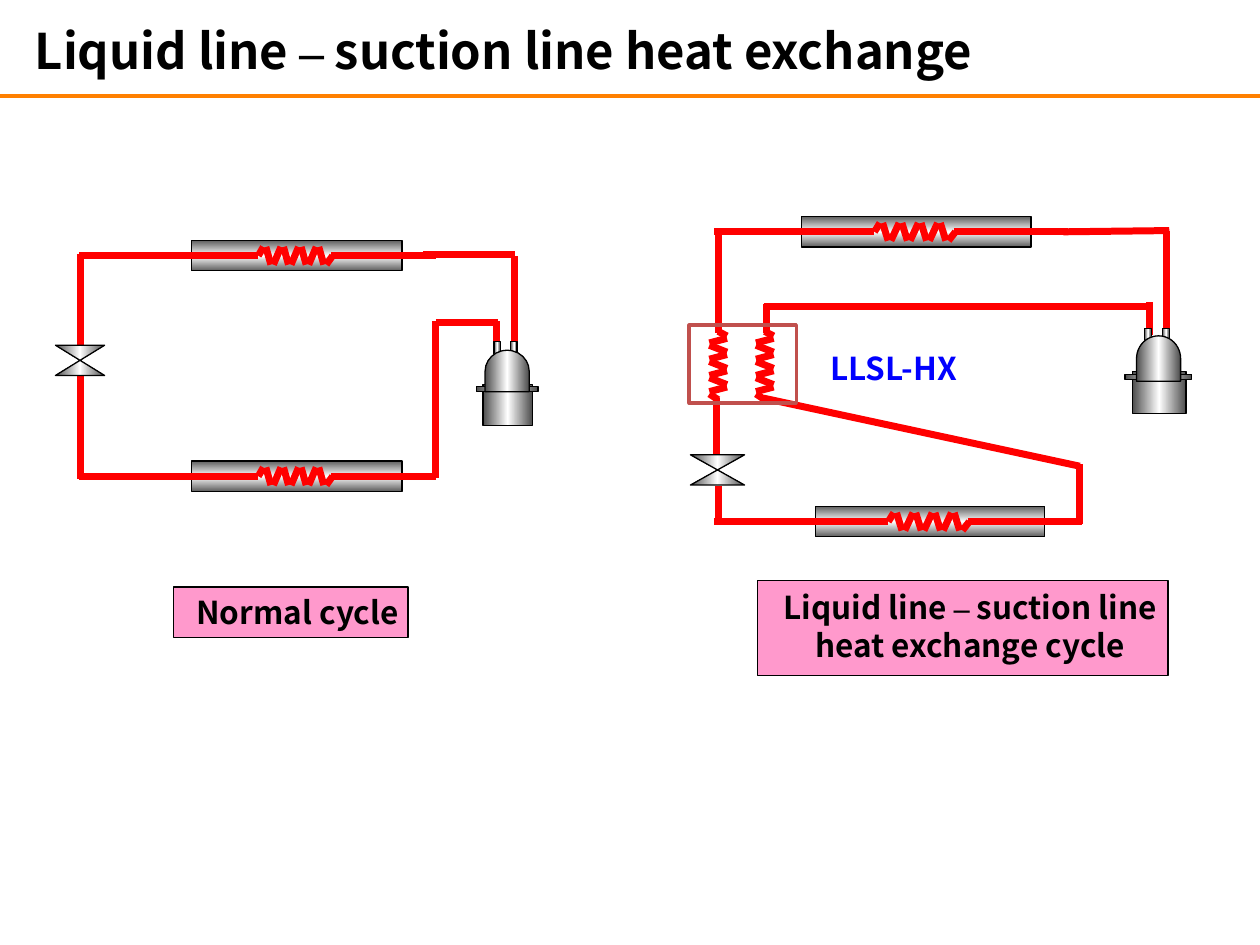
"""Build a slide comparing a normal refrigeration cycle with a liquid-suction heat exchange cycle."""
from copy import deepcopy

from lxml import etree
from pptx import Presentation
from pptx import util as u
from pptx.dml.color import RGBColor
from pptx.enum import shapes, text
from pptx.oxml import ns

RED = RGBColor(0xFF, 0x00, 0x00)
ORANGE = RGBColor(0xFF, 0x80, 0x00)
BLACK = RGBColor(0x00, 0x00, 0x00)
WHITE = RGBColor(0xFF, 0xFF, 0xFF)
BLUE = RGBColor(0x00, 0x00, 0xFF)
PINK = RGBColor(0xFF, 0x99, 0xCC)
BROWN = RGBColor(0xC0, 0x50, 0x4D)
STEEL = RGBColor(0x4D, 0x4D, 0x4D)
GRAY = RGBColor(0x5F, 0x5F, 0x5F)
SANS, SERIF = "Noto Sans CJK KR", "Times New Roman"
SHAPE = shapes.MSO_SHAPE

presentation = Presentation()
presentation.slide_width, presentation.slide_height = u.Inches(10), u.Inches(7.5)
slide = presentation.slides.add_slide(presentation.slide_layouts[6])
COLUMN = presentation.slide_width / 10
ROW = presentation.slide_height / 7.5


def add_line(x1, y1, x2, y2, color=RED, width=4):
    ends = [round(v) for v in (x1 * COLUMN, y1 * ROW, x2 * COLUMN, y2 * ROW)]
    line = slide.shapes.add_connector(shapes.MSO_CONNECTOR.STRAIGHT, *ends)
    line.line.color.rgb = color
    line.line.width = u.Pt(width)
    etree.SubElement(line._element.spPr, ns.qn("a:effectLst"))


def add_part(kind, left, top, width, height, edge=None, angle=0, rotation=0):
    box = [round(v) for v in (left * COLUMN, top * ROW, width * COLUMN, height * ROW)]
    shape = slide.shapes.add_shape(kind, *box)
    shape.shadow.inherit = False
    shape.rotation = rotation
    shape.line.color.rgb = BLACK
    shape.line.width = u.Pt(0.75)
    if edge is None:
        shape.fill.background()
        return shape
    shape.fill.gradient()
    shape.fill.gradient_angle = angle
    first = shape.fill.gradient_stops[0]._gs
    first.addnext(deepcopy(first))
    for stop, color, position in zip(shape.fill.gradient_stops, (edge, WHITE, edge), (0, 0.5, 1)):
        stop.color.rgb = color
        stop.position = position
    return shape


add_line(0, 0.76, 10, 0.76, ORANGE, 2)

PITCH = 0.14
zigzag = [(0, 0, 0.04, -0.07), (0.54, 0.07, 0.59, 0)]
zigzag += [(0.06 + PITCH * i, -0.07, 0.10 + PITCH * i, 0.07) for i in range(4)]
zigzag += [(0.12 + PITCH * i, 0.07, 0.18 + PITCH * i, -0.07) for i in range(3)]

for x, y, scale in [(2.05, 2.03, 1), (2.05, 3.78, 1), (6.94, 1.84, 1.09), (7.05, 4.14, 1.09)]:
    add_part(SHAPE.RECTANGLE, x - 0.53 * scale, y - 0.12, 1.67 * scale, 0.24, GRAY, 90)
    for start, end in [(-0.83, 0), (0.58, 1.41)]:
        add_line(x + start * scale, y, x + end * scale, y)
    for a1, b1, a2, b2 in zigzag:
        add_line(x + a1 * scale, y + b1, x + a2 * scale, y + b2)

for x in (5.7, 6.07):
    for a1, b1, a2, b2 in zigzag:
        add_line(x - b1, 2.63 + a1 * 0.92, x - b2, 2.63 + a2 * 0.92)

normal_pipes = [
    (0.64, 2.92, 0.64, 3.8), (4.08, 2.77, 4.08, 2.03), (3.46, 2.56, 3.95, 2.56),
    (3.46, 3.79, 3.46, 2.69), (3.94, 2.55, 3.94, 2.78), (3.46, 2.69, 3.46, 2.55),
    (3.36, 2.02, 4.09, 2.02), (1.31, 2.03, 0.63, 2.03), (0.64, 2.02, 0.64, 2.74),
    (0.63, 3.78, 1.45, 3.78),
]
exchange_pipes = [
    (9.26, 1.83, 9.26, 2.62), (9.12, 2.4, 9.12, 2.66), (8.57, 4.16, 8.57, 3.68),
    (5.7, 4.16, 5.7, 3.86), (5.67, 4.14, 6.18, 4.14), (5.69, 3.61, 5.69, 3.16),
    (6.06, 3.16, 8.57, 3.7), (6.08, 2.64, 6.08, 2.41), (6.06, 2.43, 9.1, 2.43),
    (8.44, 1.84, 9.28, 1.83), (6.26, 1.84, 5.67, 1.84), (5.7, 1.86, 5.7, 2.64),
]
for pipe in normal_pipes + exchange_pipes:
    add_line(*pipe)

for x, y, width, dome in [(3.78, 2.71, 0.49, 0.33), (8.93, 2.61, 0.53, 0.36)]:
    for left, top, share, height in [
        (0.29, 0, 0.1, 0.14), (0.56, 0, 0.1, 0.14), (0.11, 0.34, 0.8, 0.33), (0, 0.36, 1, 0.04),
    ]:
        add_part(SHAPE.RECTANGLE, x + left * width, y + top, share * width, height, STEEL)
    add_part(SHAPE.FLOWCHART_DELAY, x + (width - dome) / 2, y + 0.06, dome, 0.35, STEEL, 90, 270)

for x, y, width in [(0.44, 2.74, 0.39), (5.48, 3.61, 0.43)]:
    add_part(SHAPE.FLOWCHART_COLLATE, x, y, width, 0.24, STEEL)

exchanger = add_part(SHAPE.RECTANGLE, 5.47, 2.58, 0.85, 0.62)
exchanger.line.color.rgb = BROWN
exchanger.line.width = u.Pt(2)

for box in [(1.38, 4.66, 1.86, 0.4), (6.01, 4.61, 3.26, 0.75)]:
    panel = add_part(SHAPE.RECTANGLE, *box)
    panel.fill.solid()
    panel.fill.fore_color.rgb = PINK

LEFT, CENTER = text.PP_ALIGN.LEFT, text.PP_ALIGN.CENTER
for words, left, top, width, height, size, color, alignment in [
    ("Liquid line – suction line heat exchange", -0.04, 0, 8.07, 0.79, 28, BLACK, CENTER),
    ("LLSL-HX", 6.49, 2.72, 1.57, 0.4, 18, BLUE, LEFT),
    ("Normal cycle", 1.46, 4.66, 2.04, 0.4, 18, BLACK, LEFT),
    ("Liquid line – suction line heat exchange cycle", 6.06, 4.62, 3.28, 0.7, 18, BLACK, CENTER),
]:
    box = [round(v) for v in (left * COLUMN, top * ROW, width * COLUMN, height * ROW)]
    frame = slide.shapes.add_textbox(*box).text_frame
    frame.word_wrap = True
    frame.vertical_anchor = text.MSO_ANCHOR.MIDDLE if size == 28 else text.MSO_ANCHOR.TOP
    paragraph = frame.paragraphs[0]
    paragraph.alignment = alignment
    for piece in filter(None, words.partition("–")):
        run = paragraph.add_run()
        run.text = piece
        run.font.name = SERIF if piece == "–" else SANS
        run.font.size = u.Pt(size)
        run.font.bold = True
        run.font.color.rgb = color

presentation.save("out.pptx")
